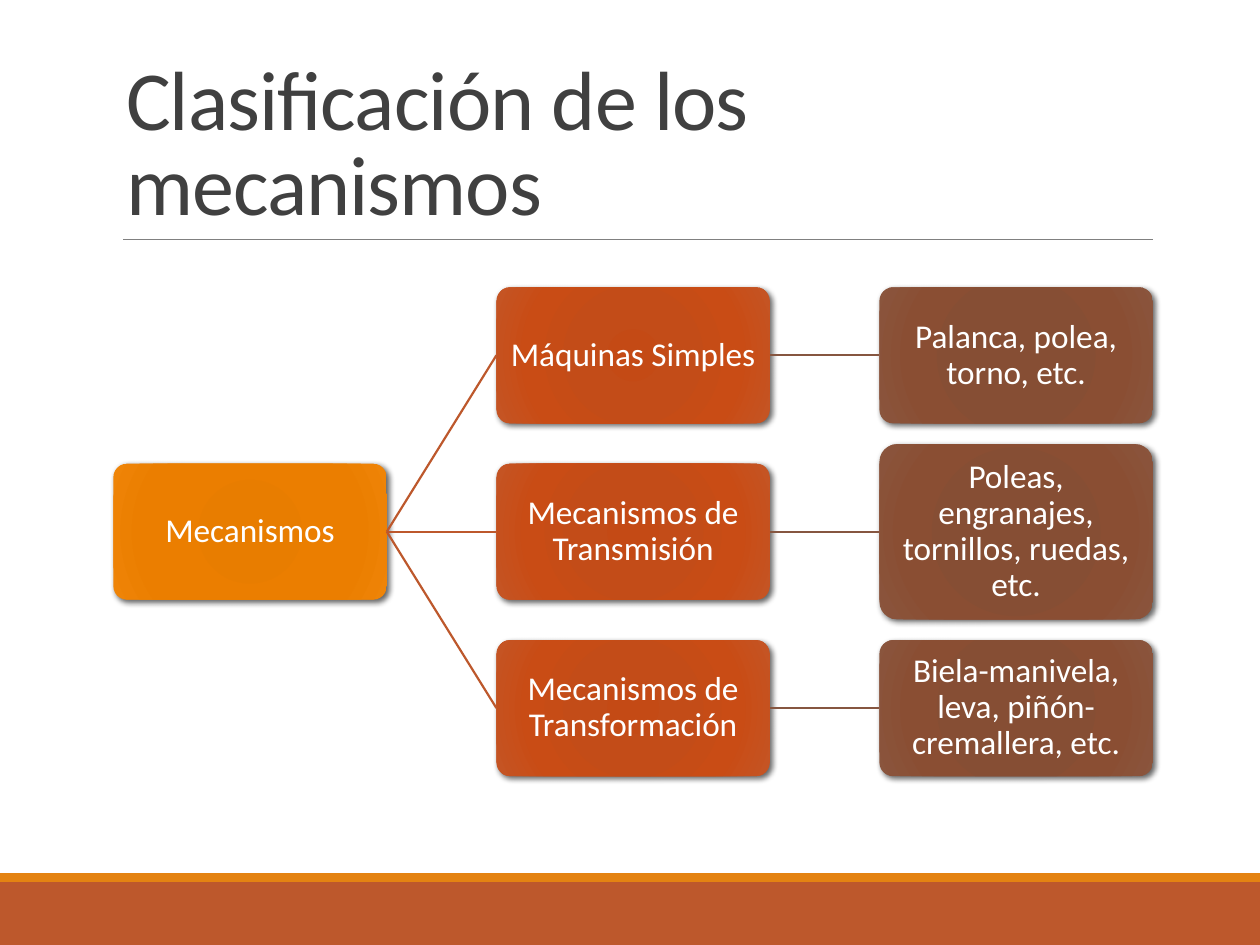
import lxml.etree
import pptx
import pptx.dml.color
import pptx.enum.shapes
import pptx.enum.text
import pptx.oxml
import pptx.oxml.ns
import pptx.util

Inches = pptx.util.Inches
Pt = pptx.util.Pt
SHAPES = pptx.enum.shapes.MSO_SHAPE
ALIGN = pptx.enum.text.PP_ALIGN
ANCHOR = pptx.enum.text.MSO_ANCHOR

FONT = "Calibri"
STOP_POSITIONS = (0, 34, 70, 100)
ORANGE_STOPS = ("E57B00", "E87D00", "EB7E00", "EF8407")
RUST_STOPS = ("C44A15", "C34C18", "C94C15", "C45525")
BROWN_STOPS = ("874C32", "864E34", "8A4E33", "8A553D")
RUST, BROWN = "BD582C", "865640"

BOX_WIDTH, BOX_HEIGHT = 2.17, 1.08
COLUMN_STEP, ROW_STEP = 3.04, 1.4
BRANCHES = [
    ("Máquinas Simples", "Palanca, polea, torno, etc.", BOX_HEIGHT),
    ("Mecanismos de Transmisión", "Poleas, engranajes, tornillos, ruedas, etc.", 1.39),
    ("Mecanismos de Transformación", "Biela-manivela, leva, piñón-cremallera, etc.", BOX_HEIGHT),
]


def color(value):
    return pptx.dml.color.RGBColor.from_string(value)


def add_run(paragraph, text, size, text_color):
    run = paragraph.add_run()
    run.text = text
    run.font.name = FONT
    run.font.size = Pt(size)
    run.font.color.rgb = color(text_color)
    return run


def set_radial_fill(shape, stops):
    shape.fill.background()
    stop_xml = "".join(
        f'<a:gs pos="{position * 1000}"><a:srgbClr val="{value}"/></a:gs>'
        for position, value in zip(STOP_POSITIONS, stops))
    gradient = pptx.oxml.parse_xml(
        f'<a:gradFill {pptx.oxml.ns.nsdecls("a")} rotWithShape="1"><a:gsLst>{stop_xml}</a:gsLst>'
        '<a:path path="circle"><a:fillToRect l="100000" t="100000" r="100000" b="100000"/>'
        '</a:path></a:gradFill>')
    properties = shape.element.spPr
    properties.replace(properties.find(pptx.oxml.ns.qn("a:noFill")), gradient)


def set_soft_shadow(shape):
    shape.shadow.inherit = False
    effects = shape.element.spPr.find(pptx.oxml.ns.qn("a:effectLst"))
    effects.append(pptx.oxml.parse_xml(
        f'<a:outerShdw {pptx.oxml.ns.nsdecls("a")} blurRad="{Pt(3.5)}" dist="{Pt(2)}" '
        'dir="2700000" algn="br" rotWithShape="0"><a:srgbClr val="000000">'
        '<a:alpha val="60000"/></a:srgbClr></a:outerShdw>'))


def add_line(slide, start, end, line_color, width):
    connector = slide.shapes.add_connector(
        pptx.enum.shapes.MSO_CONNECTOR.STRAIGHT, *map(Inches, start + end))
    connector.line.color.rgb = color(line_color)
    connector.line.width = Pt(width)
    lxml.etree.SubElement(connector.element.spPr, pptx.oxml.ns.qn("a:effectLst"))
    return connector


def join(slide, parent, child, line_color):
    """Link the right side of parent to the left side of child."""
    connector = add_line(slide, (0, 0), (1, 1), line_color, 1.25)
    connector.begin_connect(parent, 3)
    connector.end_connect(child, 1)


def add_node(slide, text, left, middle, height, stops):
    shape = slide.shapes.add_shape(
        SHAPES.ROUNDED_RECTANGLE, Inches(left), Inches(middle - height / 2),
        Inches(BOX_WIDTH), Inches(height))
    shape.adjustments[0] = 0.1
    set_radial_fill(shape, stops)
    shape.line.fill.background()
    set_soft_shadow(shape)
    frame = shape.text_frame
    frame.word_wrap = True
    frame.vertical_anchor = ANCHOR.MIDDLE
    frame.margin_left = frame.margin_right = Inches(0.04)
    frame.margin_top = frame.margin_bottom = Inches(0.04)
    paragraph = frame.paragraphs[0]
    paragraph.alignment = ALIGN.CENTER
    paragraph.line_spacing = 0.9
    add_run(paragraph, text, 19, "FFFFFF")
    return shape


def add_tree(slide, left, top):
    middles = [top + BOX_HEIGHT / 2 + row * ROW_STEP for row in range(len(BRANCHES))]
    root = add_node(slide, "Mecanismos", left, middles[1], BOX_HEIGHT, ORANGE_STOPS)
    for (group, examples, height), middle in zip(BRANCHES, middles):
        branch = add_node(slide, group, left + COLUMN_STEP, middle, BOX_HEIGHT, RUST_STOPS)
        leaf = add_node(slide, examples, left + 2 * COLUMN_STEP, middle, height, BROWN_STOPS)
        join(slide, root, branch, RUST)
        join(slide, branch, leaf, BROWN)


def add_title(slide, left, top, width, height):
    title = slide.shapes.title
    title.left, title.top = Inches(left), Inches(top)
    title.width, title.height = Inches(width), Inches(height)
    frame = title.text_frame
    frame.word_wrap = True
    frame.auto_size = pptx.enum.text.MSO_AUTO_SIZE.NONE
    frame.vertical_anchor = ANCHOR.BOTTOM
    paragraph = frame.paragraphs[0]
    paragraph.alignment = ALIGN.LEFT
    paragraph.line_spacing = 0.85
    run = add_run(paragraph, "Clasificación de los mecanismos", 48, "404040")
    run.font._element.set("spc", "-50")
    add_line(slide, (0.98, 1.9), (9.15, 1.9), "808080", 0.5)


def add_footer_bands(slide, left, top, width):
    for offset, height, fill in ((0.07, 0.5, RUST), (0, 0.07, "E48312")):
        band = slide.shapes.add_shape(
            SHAPES.RECTANGLE, Inches(left), Inches(top + offset), Inches(width), Inches(height))
        band.fill.solid()
        band.fill.fore_color.rgb = color(fill)
        band.line.fill.background()
        band.shadow.inherit = False


def main():
    presentation = pptx.Presentation()
    presentation.slide_width, presentation.slide_height = Inches(10), Inches(7.5)
    slide = presentation.slides.add_slide(presentation.slide_layouts[5])
    add_footer_bands(slide, 0, 6.93, 10)
    add_title(slide, 0.9, 0.31, 8.25, 1.59)
    add_tree(slide, 0.9, 2.28)
    presentation.save("out.pptx")


if __name__ == "__main__":
    main()
